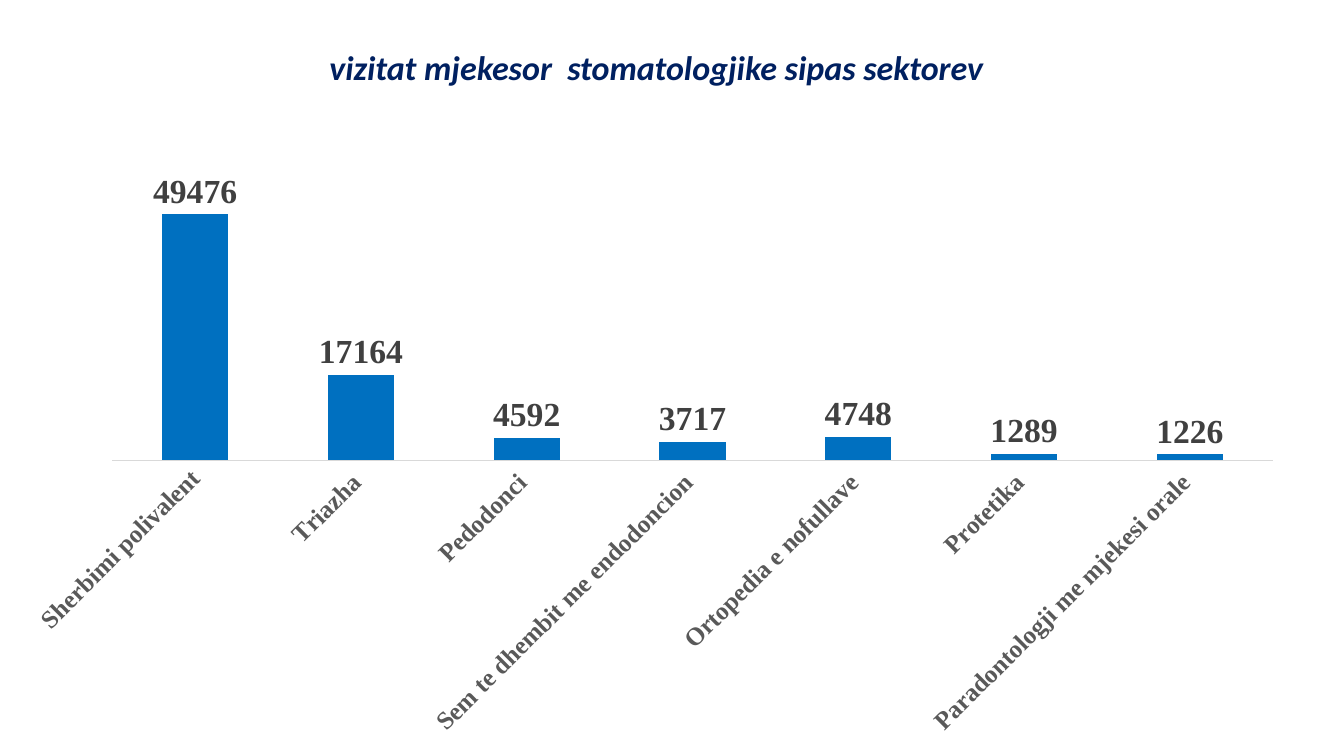
from lxml import etree
from pptx import Presentation
from pptx.chart.data import CategoryChartData
from pptx.dml.color import RGBColor
from pptx.enum import chart as ch, text
from pptx.oxml import ns
from pptx.util import Inches, Pt

VISITS = {
    "Sherbimi polivalent": 49476,
    "Triazha ": 17164,
    "Pedodonci ": 4592,
    "Sem te dhembit me endodoncion ": 3717,
    "Ortopedia e nofullave ": 4748,
    "Protetika ": 1289,
    "Paradontologji me mjekesi orale ": 1226,
}


def rgb(value):
    return RGBColor.from_string(value)


def set_font(font, name, size, color, italic=None):
    font.name, font.size = name, Pt(size)
    font.bold, font.italic = True, italic
    font.color.rgb = rgb(color)


class Deck:
    """Holds the style and the current slide."""
    title_font, chart_font = "Calibri", "Times New Roman"
    navy, blue, label, axis, line = "002060", "0070C0", "404040", "595959", "D9D9D9"

    def __init__(self):
        self.prs = Presentation()
        self.prs.slide_width, self.prs.slide_height = Inches(13.33), Inches(7.5)
        self.s = self.prs.slides.add_slide(self.prs.slide_layouts[5])

    def title(self, wording, left, top, width, height):
        sp = self.s.shapes.title
        sp.left, sp.top = Inches(left), Inches(top)
        sp.width, sp.height = Inches(width), Inches(height)
        tf = sp.text_frame
        tf.word_wrap = True
        tf.auto_size = text.MSO_AUTO_SIZE.NONE
        tf.vertical_anchor = text.MSO_ANCHOR.MIDDLE
        p = tf.paragraphs[0]
        p.alignment = text.PP_ALIGN.CENTER
        p.line_spacing = 0.9
        r = p.add_run()
        r.text = wording
        set_font(r.font, self.title_font, 24.3, self.navy, italic=True)

    def columns(self, values, left, top, width, height):
        data = CategoryChartData()
        data.categories = list(values)
        data.add_series("Series 1", list(values.values()))
        chart = self.s.shapes.add_chart(
            ch.XL_CHART_TYPE.COLUMN_CLUSTERED, Inches(left), Inches(top),
            Inches(width), Inches(height), data).chart
        chart.has_legend = chart.has_title = False
        chart.font.name, chart.font.size = self.title_font, Pt(10)
        plot = chart.plots[0]
        plot.vary_by_categories = False
        plot.gap_width, plot.overlap = 150, -25
        self.series(plot.series[0])
        self.axes(chart)
        self.plot_area(chart, x=0.08, y=0.02, w=0.9, h=0.5)

    def series(self, series):
        series.format.fill.solid()
        series.format.fill.fore_color.rgb = rgb(self.blue)
        labels = series.data_labels
        labels.show_value = True
        labels.position = ch.XL_LABEL_POSITION.OUTSIDE_END
        set_font(labels.font, self.chart_font, 24, self.label)

    def axes(self, chart):
        value = chart.value_axis
        value.minimum_scale, value.maximum_scale = 0, 60000
        value.has_major_gridlines = False
        value.visible = False
        category = chart.category_axis
        category.major_tick_mark = ch.XL_TICK_MARK.NONE
        category.format.line.color.rgb = rgb(self.line)
        category.format.line.width = Pt(0.75)
        set_font(category.tick_labels.font, self.chart_font, 18, self.axis)
        body = category._element.find(ns.qn("c:txPr")).find(ns.qn("a:bodyPr"))
        body.set("rot", str(-45 * 60000))
        body.set("vert", "horz")

    def plot_area(self, chart, **fractions):
        """Fix the inner plot area as fractions of the chart frame."""
        area = chart._chartSpace.find(".//" + ns.qn("c:plotArea"))
        for old in area.findall(ns.qn("c:layout")):
            area.remove(old)
        layout = etree.Element(ns.qn("c:layout"))
        area.insert(0, layout)
        manual = etree.SubElement(layout, ns.qn("c:manualLayout"))
        settings = {"layoutTarget": "inner", "xMode": "edge", "yMode": "edge", **fractions}
        for tag, setting in settings.items():
            etree.SubElement(manual, ns.qn("c:" + tag)).set("val", str(setting))


def main():
    deck = Deck()
    deck.title("vizitat mjekesor  stomatologjike sipas sektorev", 0, 0.32, 13.02, 0.74)
    deck.columns(VISITS, 0.09, 1.49, 12.79, 5.92)
    deck.prs.save("out.pptx")


if __name__ == "__main__":
    main()
